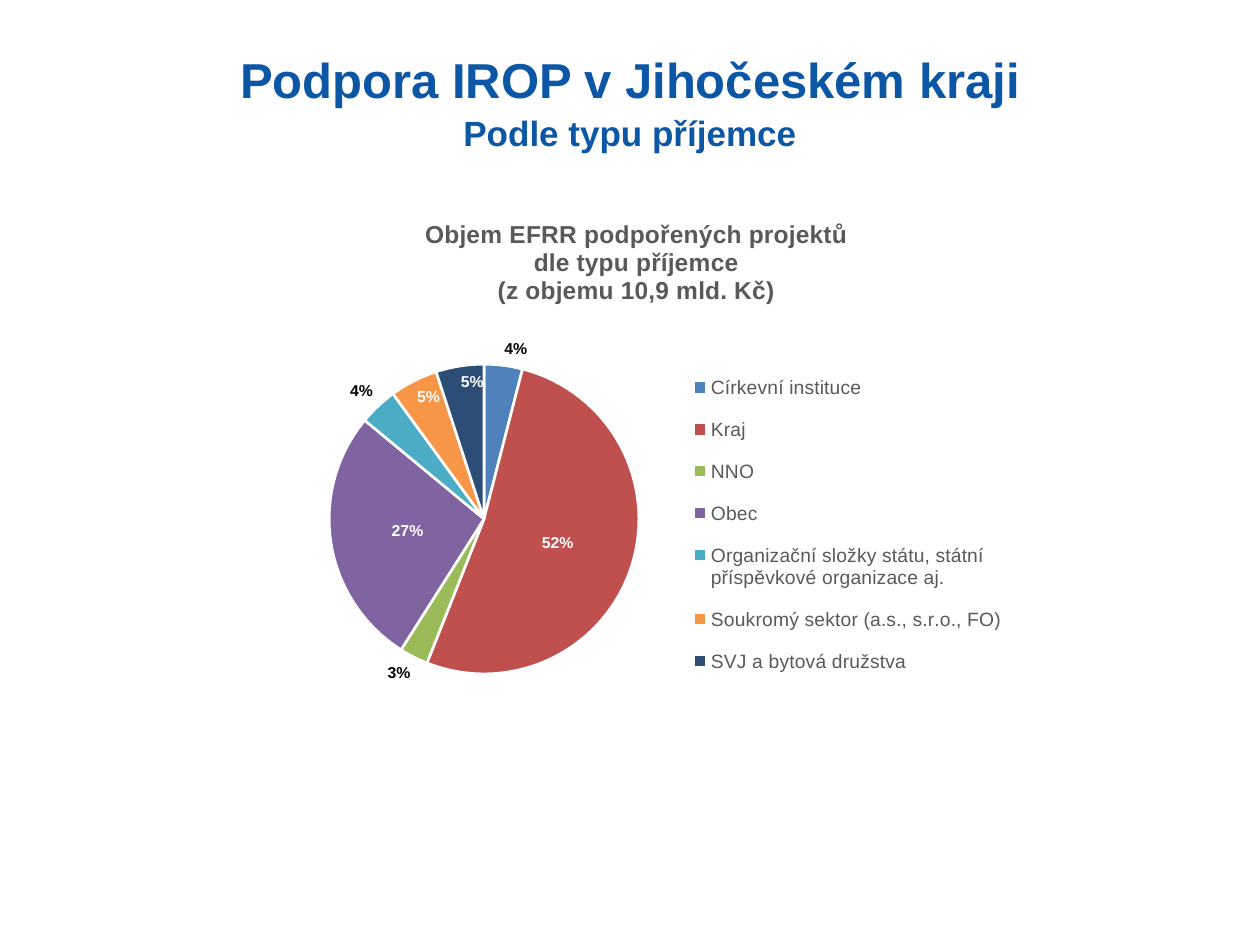
from lxml import etree
from pptx import Presentation
from pptx.chart.data import CategoryChartData
from pptx.dml.color import RGBColor
from pptx.enum.chart import XL_CHART_TYPE, XL_LABEL_POSITION, XL_LEGEND_POSITION
from pptx.enum.text import MSO_ANCHOR, PP_ALIGN
from pptx.oxml.ns import qn
from pptx.util import Emu, Pt

PIE = XL_CHART_TYPE.PIE
RIGHT = XL_LEGEND_POSITION.RIGHT
OUTSIDE = XL_LABEL_POSITION.OUTSIDE_END
INSIDE = XL_LABEL_POSITION.INSIDE_END
CENTER = XL_LABEL_POSITION.CENTER
ALIGN_CENTER = PP_ALIGN.CENTER
TOP = MSO_ANCHOR.TOP

FONT = "Arial"
BLUE = RGBColor(0x0C, 0x56, 0xA6)
GRAY = RGBColor(0x59, 0x59, 0x59)
BLACK = RGBColor(0, 0, 0)
WHITE = RGBColor(0xFF, 0xFF, 0xFF)

# Recipient, share, slice colour, label position
SLICES = [
    ("Církevní instituce", 0.04, RGBColor(0x4F, 0x81, 0xBD), OUTSIDE),
    ("Kraj", 0.52, RGBColor(0xC0, 0x50, 0x4D), CENTER),
    ("NNO", 0.03, RGBColor(0x9B, 0xBB, 0x59), OUTSIDE),
    ("Obec", 0.27, RGBColor(0x80, 0x64, 0xA2), CENTER),
    ("Organizační složky státu, státní příspěvkové organizace aj.", 0.04,
     RGBColor(0x4B, 0xAC, 0xC6), OUTSIDE),
    ("Soukromý sektor (a.s., s.r.o., FO)", 0.05, RGBColor(0xF7, 0x96, 0x46), INSIDE),
    ("SVJ a bytová družstva", 0.05, RGBColor(0x2C, 0x4D, 0x75), INSIDE),
]


def px(length):
    return Emu(round(length * 914400 / 126))


def set_font(font, size, color, bold=False):
    font.name = FONT
    font.size = Pt(size)
    font.bold = bold
    font.color.rgb = color


def write_line(frame, text, first=False, size=14, color=GRAY, bold=True, before=0):
    para = frame.paragraphs[0] if first else frame.add_paragraph()
    para.alignment = ALIGN_CENTER
    para.space_before = Pt(before)
    span = para.add_run()
    span.text = text
    set_font(span.font, size, color, bold)


def place_part(part, index, inner=False, **fractions):
    """Give a chart part a manual layout, as fractions of the chart."""
    for old in part.findall(qn("c:layout")):
        part.remove(old)
    layout = etree.Element(qn("c:layout"))
    manual = etree.SubElement(layout, qn("c:manualLayout"))
    if inner:
        etree.SubElement(manual, qn("c:layoutTarget")).set("val", "inner")
    for name, value in {"xMode": "edge", "yMode": "edge", **fractions}.items():
        etree.SubElement(manual, qn(f"c:{name}")).set("val", str(value))
    part.insert(index, layout)


def add_title(page):
    box = page.shapes.title
    box.left, box.top, box.width, box.height = px(107), px(38), px(1046), px(166)
    frame = box.text_frame
    frame.word_wrap = True
    frame.vertical_anchor = TOP
    frame.margin_top = px(11)
    write_line(frame, "Podpora IROP v Jihočeském kraji", first=True, size=28, color=BLUE)
    write_line(frame, "Podle typu příjemce", size=20, color=BLUE, before=2)


def add_pie(page):
    data = CategoryChartData(number_format="0%")
    data.categories = [name for name, *_ in SLICES]
    data.add_series("Series 1", [share for _, share, *_ in SLICES])
    chart = page.shapes.add_chart(PIE, px(212), px(210), px(837), px(524), data).chart
    set_font(chart.font, 10, BLACK)

    # Chart title
    chart.has_title = True
    frame = chart.chart_title.text_frame
    write_line(frame, "Objem EFRR podpořených projektů", first=True)
    write_line(frame, "dle typu příjemce")
    write_line(frame, "(z objemu 10,9 mld. Kč)")
    title = chart.chart_title._element
    place_part(title, 1, x=0.25, y=0.01)

    # Legend
    chart.has_legend = True
    legend = chart.legend
    legend.position = RIGHT
    legend.include_in_layout = False
    set_font(legend.font, 11, GRAY)
    place_part(legend._element, 1, x=0.56, y=0.28, w=0.4, h=0.64)

    # Slices and their labels
    plot = chart.plots[0]
    plot.vary_by_categories = True
    plot.has_data_labels = True
    labels = plot.data_labels
    labels.show_value = True
    labels.show_percentage = False
    labels.number_format = "0%"
    labels.number_format_is_linked = False
    set_font(labels.font, 9, WHITE, bold=True)
    for index, (_, _, color, position) in enumerate(SLICES):
        point = plot.series[0].points[index]
        point.format.fill.solid()
        point.format.fill.fore_color.rgb = color
        point.format.line.color.rgb = WHITE
        point.format.line.width = Pt(1.5)
        label = point.data_label
        set_font(label.font, 9, BLACK if position == OUTSIDE else WHITE, bold=True)
        label.position = position
    plot_area = chart._chartSpace.chart.plotArea
    place_part(plot_area, 0, inner=True, x=0.14, y=0.29, w=0.37, h=0.6)


def main():
    deck = Presentation()
    deck.slide_width, deck.slide_height = px(1260), px(945)
    page = deck.slides.add_slide(deck.slide_layouts[5])
    add_title(page)
    add_pie(page)
    deck.save("out.pptx")


if __name__ == "__main__":
    main()
